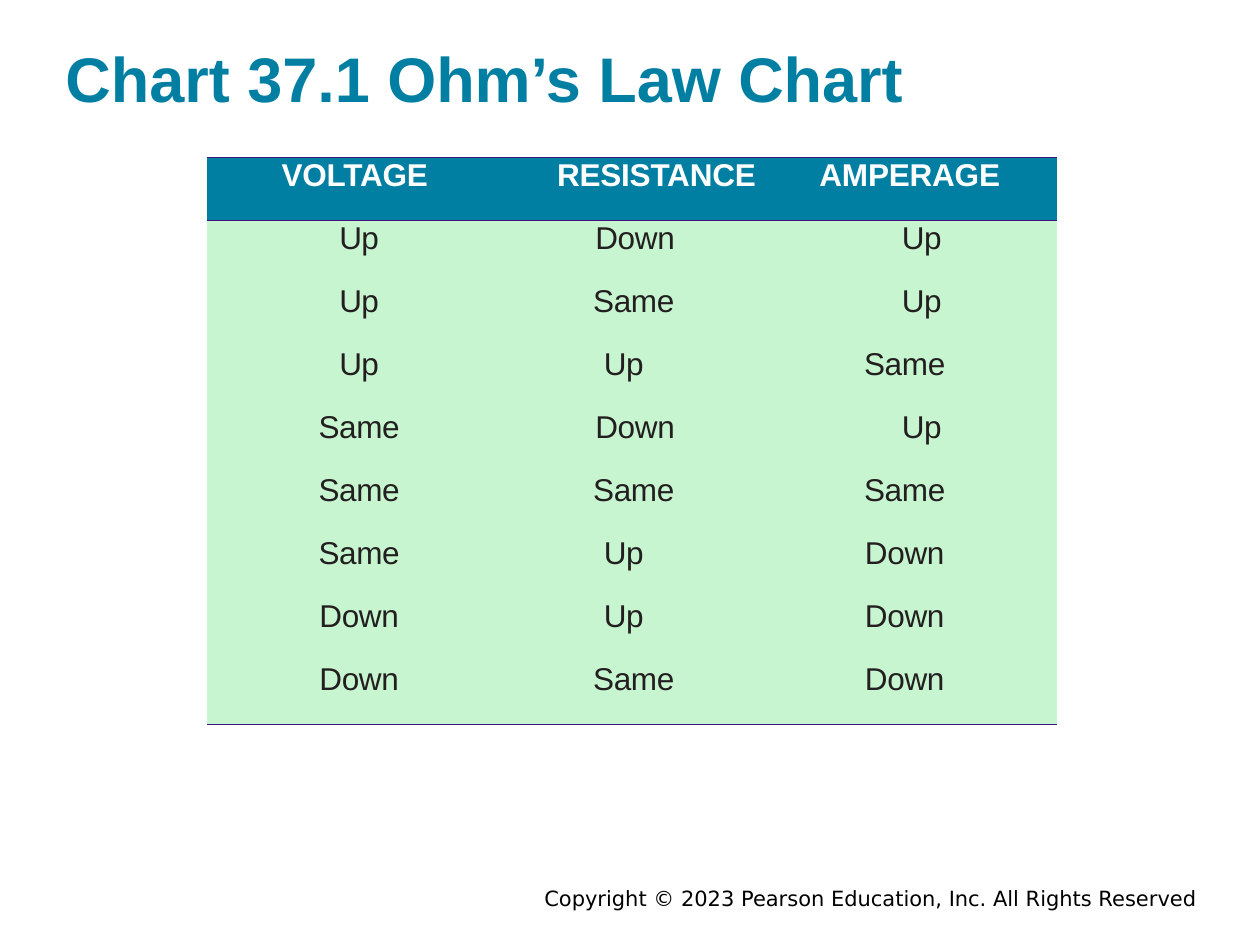
from lxml.etree import SubElement
from pptx import Presentation
from pptx.dml.color import RGBColor
from pptx.enum.text import MSO_ANCHOR, PP_ALIGN
from pptx.oxml.ns import qn
from pptx.util import Inches, Pt

TEAL = RGBColor(0x00, 0x7F, 0xA3)
MINT = RGBColor(0xC6, 0xF5, 0xCF)
WHITE = RGBColor(0xFF, 0xFF, 0xFF)
INK = RGBColor(0x23, 0x1F, 0x20)
BLACK = RGBColor(0x00, 0x00, 0x00)
PURPLE = RGBColor(0x3C, 0x15, 0x81)

HEADERS = ["VOLTAGE", "RESISTANCE", "AMPERAGE"]
ROWS = [
    ["Up", "Down", "Up"],
    ["Up", "Same", "Up"],
    ["Up", "Up", "Same"],
    ["Same", "Down", "Up"],
    ["Same", "Same", "Same"],
    ["Same", "Up", "Down"],
    ["Down", "Up", "Down"],
    ["Down", "Same", "Down"],
]

# Left and right paragraph margins in inches, by column and word
HEADER_MARGINS = [(0.1, 0), (0.39, 0), (0, 0.09)]
BODY_MARGINS = [
    {"Up": (0.17, 0), "Same": (0.17, 0), "Down": (0.17, 0)},
    {"Up": (0.3, 0.43), "Same": (0.46, 0.43), "Down": (0.48, 0.43)},
    {"Up": (0.42, 0.32), "Same": (0, 0.17), "Down": (0, 0.17)},
]


def style_text(p, name, size, color, bold=False):
    p.font.name = name
    p.font.size = Pt(size)
    p.font.bold = bold
    p.font.color.rgb = color


def set_borders(cell, ruled):
    """Draw a 1 pt line on the ruled sides and none on the others."""
    tcPr = cell._tc.get_or_add_tcPr()
    for i, side in enumerate(["lnL", "lnR", "lnT", "lnB"]):
        ln = tcPr.makeelement(qn(f"a:{side}"), {"w": str(Pt(1))})
        if side in ruled:
            fill = SubElement(ln, qn("a:solidFill"))
            SubElement(fill, qn("a:srgbClr"), val=str(PURPLE))
        else:
            SubElement(ln, qn("a:noFill"))
        tcPr.insert(i, ln)


prs = Presentation()
prs.slide_width = Inches(10)
prs.slide_height = Inches(7.5)
s = prs.slides.add_slide(prs.slide_layouts[6])

# Copyright line
footer = s.shapes.add_textbox(Inches(1.77), Inches(6.98), Inches(7.83), Inches(0.3))
tf = footer.text_frame
tf.word_wrap = True
p = tf.paragraphs[0]
p.text = "Copyright © 2023 Pearson Education, Inc. All Rights Reserved"
p.alignment = PP_ALIGN.RIGHT
style_text(p, "DejaVu Sans", 12, BLACK)

# Title
title = s.shapes.add_textbox(Inches(0.52), Inches(0.25), Inches(9), Inches(0.71))
tf = title.text_frame
tf.word_wrap = True
tf.margin_left = tf.margin_right = 0
tf.vertical_anchor = MSO_ANCHOR.BOTTOM
p = tf.paragraphs[0]
p.text = "Chart 37.1 Ohm’s Law Chart"
style_text(p, "Arial", 36, TEAL, bold=True)

# Ohm's law table
grid = [HEADERS] + ROWS
table = s.shapes.add_table(len(grid), len(HEADERS), Inches(1.64), Inches(1.25),
                           Inches(6.75), Inches(4.5)).table
for row, words in enumerate(grid):
    is_header = row == 0
    for col, word in enumerate(words):
        cell = table.cell(row, col)
        cell.margin_left = cell.margin_right = cell.margin_top = cell.margin_bottom = 0
        cell.fill.solid()
        cell.fill.fore_color.rgb = TEAL if is_header else MINT
        if is_header:
            ruled = ["lnT", "lnB"]
        elif row == 1:
            ruled = ["lnT"]
        elif row == len(ROWS):
            ruled = ["lnB"]
        else:
            ruled = []
        set_borders(cell, ruled)

        p = cell.text_frame.paragraphs[0]
        r = p.add_run()
        r.text = word
        p.alignment = PP_ALIGN.CENTER
        left, right = HEADER_MARGINS[col] if is_header else BODY_MARGINS[col][word]
        pPr = p._p.get_or_add_pPr()
        pPr.set("marL", str(Inches(left)))
        pPr.set("marR", str(Inches(right)))
        pPr.set("indent", "0")
        spacing = -10 if is_header else -30 if word == "Up" else -20
        r._r.get_or_add_rPr().set("spc", str(spacing))
        style_text(p, "Arial", 18, WHITE if is_header else INK, bold=is_header)

prs.save("out.pptx")
